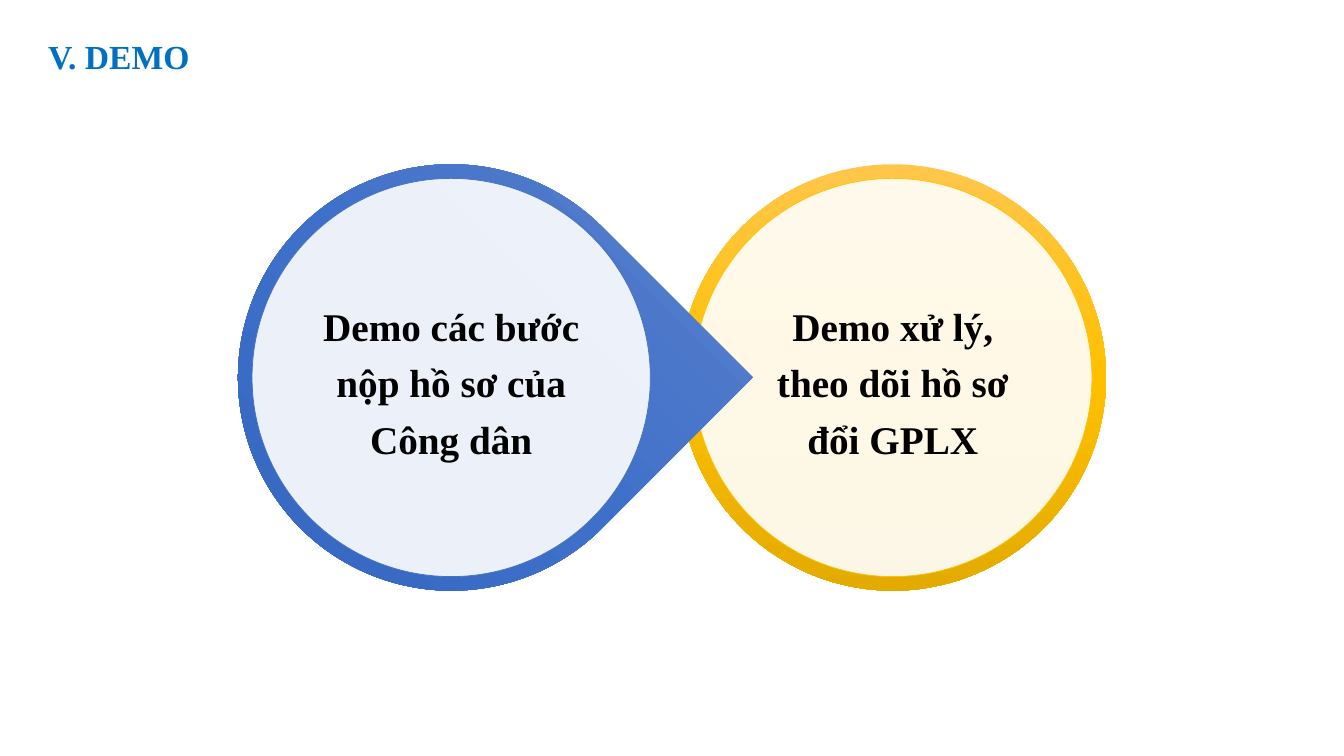
from copy import deepcopy

from lxml import etree
from pptx import Presentation
from pptx import util as u
from pptx.dml.color import RGBColor
from pptx.enum import shapes, text
from pptx.oxml.ns import qn

PX = 9144
FONT = "Times New Roman"
COLORS = {
    "title": "0070C0", "body": "000000", "disc": "FFFFFF",
    "blue_light": "6183CB", "blue_mid": "3E70CA", "blue_dark": "3062BB", "blue_line": "4472C4",
    "gold_light": "FFC64B", "gold_mid": "FFC000", "gold_dark": "E3AB00", "gold_line": "FFC000",
}
RING_SIZE = 423
DISC_INSET = 14
LABEL_INSET = 70


def color(name):
    """Return the named colour."""
    return RGBColor.from_string(COLORS[name])


def inset_box(box, gap):
    """Shrink a box by the same gap on every side."""
    left, top, width, height = box
    return left + gap, top + gap, width - 2 * gap, height - 2 * gap


def to_emu(box):
    """Turn a box in px into EMU lengths."""
    return [length * PX for length in box]


def add_text(page, box, words, size, ink, align, spacing, margins):
    """Place one bold paragraph in a wrapped, vertically centred text box."""
    frame = page.shapes.add_textbox(*to_emu(box)).text_frame
    frame.word_wrap = True
    frame.vertical_anchor = text.MSO_ANCHOR.MIDDLE
    frame.margin_left = frame.margin_right = margins[0] * PX
    frame.margin_top = frame.margin_bottom = margins[1] * PX
    para = frame.paragraphs[0]
    para.alignment = align
    para.line_spacing = spacing
    span = para.add_run()
    span.text = words
    span.font.name = FONT
    span.font.size = u.Pt(size)
    span.font.bold = True
    span.font.color.rgb = color(ink)


def fill_gradient(shape, names):
    """Fill a shape from top to bottom with evenly spaced colours."""
    shape.fill.gradient()
    shape.fill.gradient_angle = 270
    stop_list = shape._element.spPr.find(qn("a:gradFill")).find(qn("a:gsLst"))
    stop_list.append(deepcopy(stop_list[0]))
    for index, (stop, name) in enumerate(zip(shape.fill.gradient_stops, names)):
        stop.position = index / (len(names) - 1)
        stop.color.rgb = color(name)


def add_step(page, box, words, preset, hue, rotation=0):
    """Draw a gradient ring with a pale disc and a centred label."""
    ring = page.shapes.add_shape(preset, *to_emu(box))
    ring.shadow.inherit = False
    ring.rotation = rotation
    ring.line.fill.background()
    fill_gradient(ring, [f"{hue}_{tone}" for tone in ("light", "mid", "dark")])

    disc = page.shapes.add_shape(shapes.MSO_SHAPE.OVAL, *to_emu(inset_box(box, DISC_INSET)))
    disc.shadow.inherit = False
    disc.fill.solid()
    disc.fill.fore_color.rgb = color("disc")
    paint = disc._element.spPr.find(qn("a:solidFill"))[0]
    etree.SubElement(paint, qn("a:alpha")).set("val", "90000")
    disc.line.color.rgb = color(f"{hue}_line")
    disc.line.width = u.Pt(0.5)

    add_text(page, inset_box(box, LABEL_INSET), words, 28, "body",
             text.PP_ALIGN.CENTER, 1.2, (4, 4))


def main():
    """Build the demo slide."""
    deck = Presentation()
    deck.slide_width, deck.slide_height = 1333 * PX, 750 * PX
    page = deck.slides.add_slide(deck.slide_layouts[6])
    add_text(page, (38, 29, 1261, 58), "V. DEMO", 24, "title",
             text.PP_ALIGN.LEFT, 0.9, (10, 5))
    add_step(page, (674, 163, RING_SIZE, RING_SIZE), "Demo xử lý, theo dõi hồ sơ đổi GPLX",
             shapes.MSO_SHAPE.OVAL, "gold")
    add_step(page, (236, 163, RING_SIZE, RING_SIZE), "Demo các bước nộp hồ sơ của Công dân",
             shapes.MSO_SHAPE.TEAR, "blue", rotation=45)
    deck.save("out.pptx")


if __name__ == "__main__":
    main()
